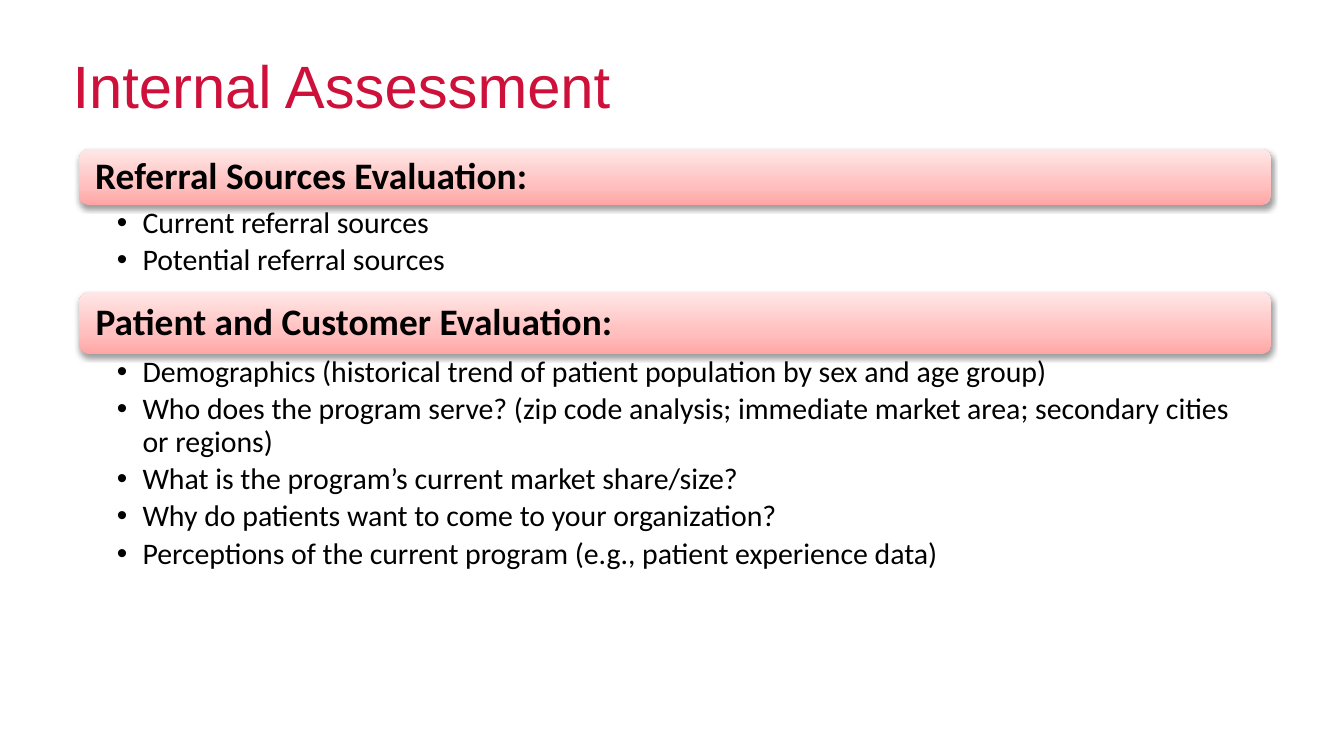
from dataclasses import dataclass

from pptx import Presentation
from pptx.dml.color import RGBColor
from pptx.enum.shapes import MSO_SHAPE
from pptx.enum.text import MSO_ANCHOR, MSO_AUTO_SIZE, PP_ALIGN
from pptx.oxml import parse_xml
from pptx.oxml.ns import nsdecls
from pptx.slide import Slide
from pptx.text.text import TextFrame
from pptx.util import Pt

ROUNDED = MSO_SHAPE.ROUNDED_RECTANGLE
TOP, MIDDLE, BOTTOM = MSO_ANCHOR.TOP, MSO_ANCHOR.MIDDLE, MSO_ANCHOR.BOTTOM
LEFT = PP_ALIGN.LEFT
NO_AUTOFIT = MSO_AUTO_SIZE.NONE

TITLE_ONLY = 5
CRIMSON, BLACK = "CD113B", "000000"
BAR_GRADIENT = ((0, "FFA6A5"), (35, "FFC0BF"), (100, "FFE7E7"))
SECTION_LEFT, SECTION_WIDTH = 42.5, 638.6
BULLET_INDENT = 13.7
BULLET_GAP = 2.8


@dataclass
class Section:
    heading: str
    top: float
    bar_height: float
    list_height: float
    items: list[str]


SECTIONS = [
    Section("Referral Sources Evaluation:", 79.9, 29.9, 72, [
        "Current referral sources",
        "Potential referral sources",
    ]),
    Section("Patient and Customer Evaluation:", 156.4, 33.3, 125.3, [
        "Demographics (historical trend of patient population by sex and age group)",
        "Who does the program serve? (zip code analysis; immediate market area; "
        "secondary cities or regions)",
        "What is the program’s current market share/size?",
        "Why do patients want to come to your organization?",
        "Perceptions of the current program (e.g., patient experience data)",
    ]),
]


def rgb(hex_color: str) -> RGBColor:
    return RGBColor.from_string(hex_color)


def write(frame: TextFrame, lines: list[str], *, size: float, font: str = "Calibri",
          color: str = BLACK, bold: bool = False, anchor: MSO_ANCHOR = TOP,
          insets: tuple[float, float, float, float] = (0, 0, 0, 0),
          line_spacing: float = 0.9, gap: float = 0, bulleted: bool = False) -> None:
    """Fill a frame with one paragraph per line; insets run left, top, right, bottom."""
    frame.word_wrap = True
    frame.auto_size = NO_AUTOFIT
    frame.vertical_anchor = anchor
    (frame.margin_left, frame.margin_top,
     frame.margin_right, frame.margin_bottom) = map(Pt, insets)
    for index, line in enumerate(lines):
        paragraph = frame.paragraphs[0] if index == 0 else frame.add_paragraph()
        paragraph.text = line
        paragraph.alignment = LEFT
        paragraph.line_spacing = line_spacing
        paragraph.space_after = Pt(gap)
        if bulleted:
            add_bullet(paragraph)
        paragraph.font.name = font
        paragraph.font.size = Pt(size)
        paragraph.font.bold = bold
        paragraph.font.color.rgb = rgb(color)


def add_bullet(paragraph) -> None:
    properties = paragraph._p.get_or_add_pPr()
    properties.set("marL", str(Pt(BULLET_INDENT)))
    properties.set("indent", str(-Pt(BULLET_INDENT)))
    properties.append(parse_xml(f'<a:buFont {nsdecls("a")} typeface="Arial"/>'))
    properties.append(parse_xml(f'<a:buChar {nsdecls("a")} char="•"/>'))


def style_bar(bar) -> None:
    """Give a bar its upward three-stop gradient and soft drop shadow."""
    bar.line.fill.background()
    stops = "".join(
        f'<a:gs pos="{position * 1000}"><a:srgbClr val="{color}"/></a:gs>'
        for position, color in BAR_GRADIENT)
    properties = bar._element.spPr
    properties.insert(2, parse_xml(
        f'<a:gradFill {nsdecls("a")} rotWithShape="1"><a:gsLst>{stops}</a:gsLst>'
        '<a:lin ang="16200000" scaled="0"/></a:gradFill>'))
    properties.append(parse_xml(
        f'<a:effectLst {nsdecls("a")}><a:outerShdw blurRad="{Pt(3.1)}" '
        f'dist="{Pt(1.6)}" dir="5400000" rotWithShape="0"><a:srgbClr val="{BLACK}">'
        '<a:alpha val="38000"/></a:srgbClr></a:outerShdw></a:effectLst>'))


def draw_section(slide: Slide, section: Section) -> None:
    bar = slide.shapes.add_shape(
        ROUNDED, Pt(SECTION_LEFT), Pt(section.top),
        Pt(SECTION_WIDTH), Pt(section.bar_height))
    style_bar(bar)
    write(bar.text_frame, [section.heading], size=20, bold=True, anchor=MIDDLE,
          insets=(7.2, 0, 7.2, 0))
    details = slide.shapes.add_textbox(
        Pt(SECTION_LEFT), Pt(section.top + section.bar_height),
        Pt(SECTION_WIDTH), Pt(section.list_height))
    write(details.text_frame, section.items, size=16, insets=(20.2, 1.4, 8.6, 1.4),
          gap=BULLET_GAP, bulleted=True)


def main() -> None:
    deck = Presentation()
    deck.slide_width, deck.slide_height = Pt(720), Pt(405)
    slide = deck.slides.add_slide(deck.slide_layouts[TITLE_ONLY])

    title = slide.shapes.title
    title.left, title.top, title.width, title.height = map(Pt, (31.7, 22.3, 648, 42.5))
    write(title.text_frame, ["Internal Assessment"], size=32, font="Arial",
          color=CRIMSON, anchor=BOTTOM, insets=(7.2, 0, 7.2, 0), line_spacing=1.0)

    for section in SECTIONS:
        draw_section(slide, section)
    deck.save("out.pptx")


if __name__ == "__main__":
    main()
